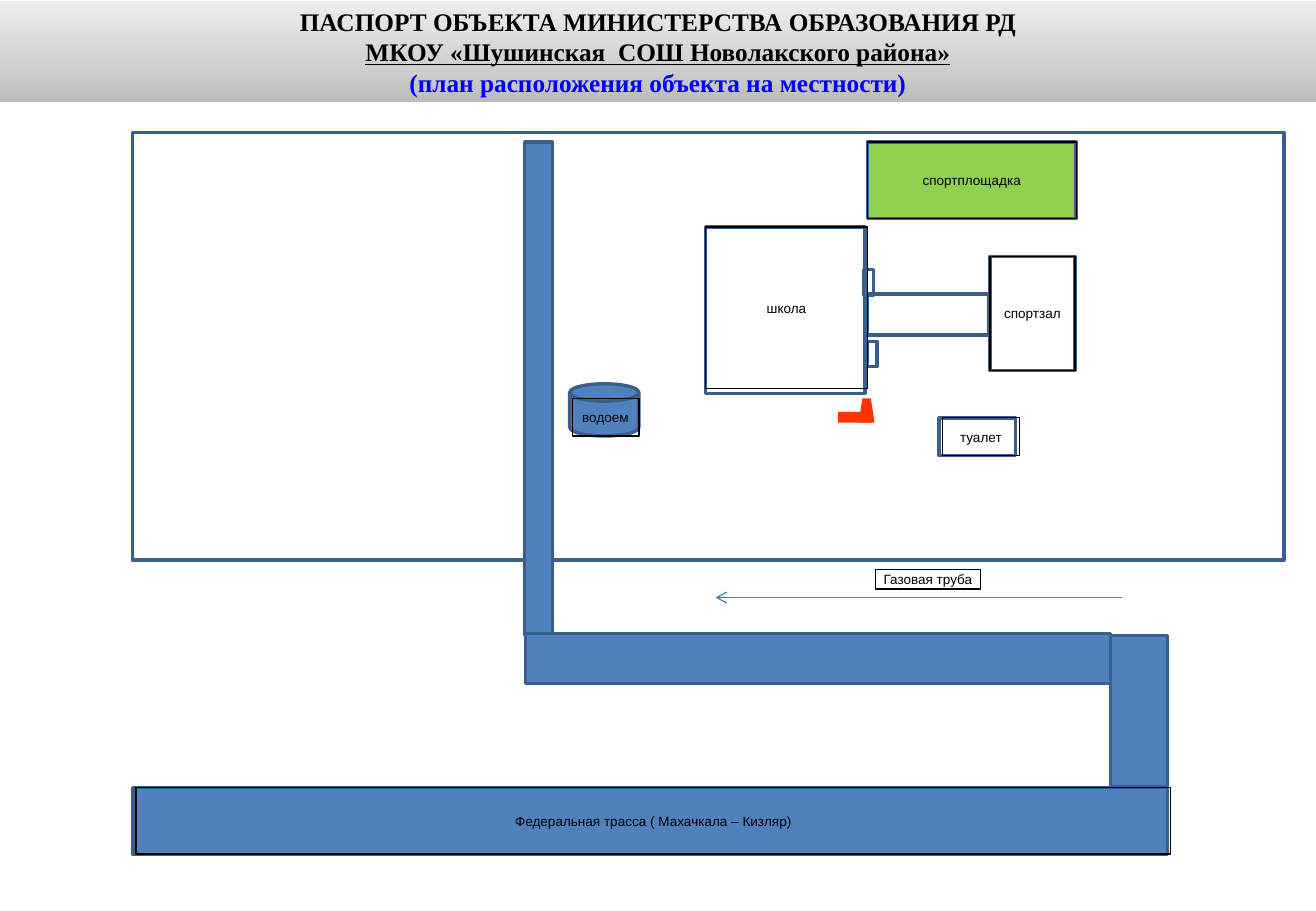
from copy import deepcopy

from lxml import etree
from pptx import Presentation
from pptx.dml.color import RGBColor
from pptx.enum.shapes import MSO_CONNECTOR, MSO_SHAPE
from pptx.enum.text import MSO_ANCHOR, PP_ALIGN
from pptx.oxml.ns import qn
from pptx.util import Pt

RECTANGLE = MSO_SHAPE.RECTANGLE
DISK = MSO_SHAPE.FLOWCHART_MAGNETIC_DISK
STRAIGHT = MSO_CONNECTOR.STRAIGHT
MIDDLE = MSO_ANCHOR.MIDDLE
CENTER = PP_ALIGN.CENTER

COLORS = {
    "black": "000000", "title_blue": "0000FF", "outline": "3A5F8C",
    "road": "4F81BD", "pipe": "4B7EBC", "grass": "92D050", "stove": "FF3300",
    "banner_dark": "BCBCBC", "banner_mid": "D0D0D0", "banner_light": "EDEDED",
}

SLIDE_SIZE = (780, 540)
BANNER = (0, 0.7, 780, 59.8)
BANNER_STOPS = [(0, "banner_dark"), (0.35, "banner_mid"), (1, "banner_light")]
TITLE_LINES = [
    ("ПАСПОРТ ОБЪЕКТА МИНИСТЕРСТВА ОБРАЗОВАНИЯ РД", "black", False),
    ("МКОУ «Шушинская  СОШ Новолакского района»", "black", True),
    ("(план расположения объекта на местности)", "title_blue", False),
]
TITLE_FONT = {"name": "Times New Roman", "size": Pt(15), "bold": True}
LABEL_FONT = {"name": "Arial", "size": Pt(8)}
TITLE_FRAME = {"vertical_anchor": MIDDLE, "word_wrap": True}
LABEL_FRAME = {"vertical_anchor": MIDDLE, "word_wrap": False}

GYM = (586.8, 151.9, 50.4, 67.7)
SPORTS_GROUND = (514.1, 84.2, 123.8, 45.4)

TERRITORY = (78.5, 78.5, 682.6, 253.4)
SCHOOL = (418.3, 134.6, 94.3, 98.6)
PASSAGE = (514.1, 174.2, 72, 24.5)
LOWER_PORCH = (514.1, 202.3, 5.8, 15.1)
UPPER_PORCH = (511.9, 159.8, 5.8, 15.1)
TOILET = (556.6, 247.7, 45.4, 22.3)
POND = (337.7, 227.5, 41, 31)
LANE = (311, 84.2, 16.6, 292.3)
HIGHWAY = (78.8, 466.9, 613.4, 39.6)
TURNOFF = (658.1, 376.6, 33.8, 90)
STREET = (311.4, 375.5, 347, 29.5)

OUTLINES = [TERRITORY, SCHOOL, PASSAGE, LOWER_PORCH, UPPER_PORCH, GYM, TOILET]
ROADS = [LANE, HIGHWAY, TURNOFF, STREET]

GAS_PIPE = (665.3, 354.2, 424.1, 354.2)
STOVE = (496.8, 244.1, 19.4, 6.5)
CHIMNEY = [(518.4, 250.6), (516.2, 236.2), (511.2, 236.2), (509, 250.6)]

LABELS = [
    ("школа", (418.3, 134.6, 95.8, 95.8)),
    ("спортзал", GYM),
    ("спортплощадка", SPORTS_GROUND),
    ("туалет", (558.7, 247.7, 45.4, 22.3)),
    ("Газовая труба", (519.1, 337.7, 61.9, 11.5)),
    ("Федеральная трасса ( Махачкала – Кизляр)", (80.6, 466.6, 613.4, 39.6)),
    ("водоем", (339.1, 236.2, 39.6, 22.3)),
]


def color(name):
    return RGBColor.from_string(COLORS[name])


def apply(target, values):
    for name, value in values.items():
        setattr(target, name, value)


def paint(shape, fill=None, line=None, width=2):
    shape.shadow.inherit = False
    if fill:
        shape.fill.solid()
        shape.fill.fore_color.rgb = color(fill)
    else:
        shape.fill.background()
    if line:
        shape.line.color.rgb = color(line)
        shape.line.width = Pt(width)
    else:
        shape.line.fill.background()


def add_box(slide, box, fill=None, line="outline", width=2, kind=RECTANGLE):
    shape = slide.shapes.add_shape(kind, *map(Pt, box))
    paint(shape, fill, line, width)
    return shape


def write(shape, lines, font_values, frame_values):
    frame = shape.text_frame
    apply(frame, frame_values)
    for index, (text, color_name, underline) in enumerate(lines):
        paragraph = frame.add_paragraph() if index else frame.paragraphs[0]
        paragraph.alignment = CENTER
        run = paragraph.add_run()
        run.text = text
        apply(run.font, font_values)
        run.font.underline = underline
        run.font.color.rgb = color(color_name)


def add_banner(slide):
    shape = add_box(slide, BANNER, line=None)
    shape.fill.gradient()
    shape.fill.gradient_angle = 90
    stop_list = next(shape._element.iter(qn("a:gsLst")))
    stop_list.append(deepcopy(stop_list[-1]))
    for stop, (position, name) in zip(shape.fill.gradient_stops, BANNER_STOPS):
        stop.position = position
        stop.color.rgb = color(name)
    write(shape, TITLE_LINES, TITLE_FONT, TITLE_FRAME)


def add_gas_pipe(slide):
    connector = slide.shapes.add_connector(STRAIGHT, *map(Pt, GAS_PIPE))
    connector.line.color.rgb = color("pipe")
    connector.line.width = Pt(0.75)
    etree.SubElement(connector.line._get_or_add_ln(), qn("a:tailEnd"), type="arrow")
    etree.SubElement(connector._element.spPr, qn("a:effectLst"))


def add_stove(slide):
    add_box(slide, STOVE, "stove", None)
    points = [(Pt(x), Pt(y)) for x, y in CHIMNEY]
    builder = slide.shapes.build_freeform(*points[0])
    builder.add_line_segments(points[1:], close=True)
    paint(builder.convert_to_shape(), "stove")


def main():
    presentation = Presentation()
    presentation.slide_width, presentation.slide_height = map(Pt, SLIDE_SIZE)
    slide = presentation.slides.add_slide(presentation.slide_layouts[6])

    add_banner(slide)
    for box in OUTLINES:
        add_box(slide, box)
    add_gas_pipe(slide)
    add_box(slide, POND, "road", kind=DISK)
    for box in ROADS:
        add_box(slide, box, "road")
    add_stove(slide)
    add_box(slide, SPORTS_GROUND, "grass")
    for text, box in LABELS:
        label = add_box(slide, box, line="black", width=0.75)
        write(label, [(text, "black", False)], LABEL_FONT, LABEL_FRAME)

    presentation.save("out.pptx")


if __name__ == "__main__":
    main()
